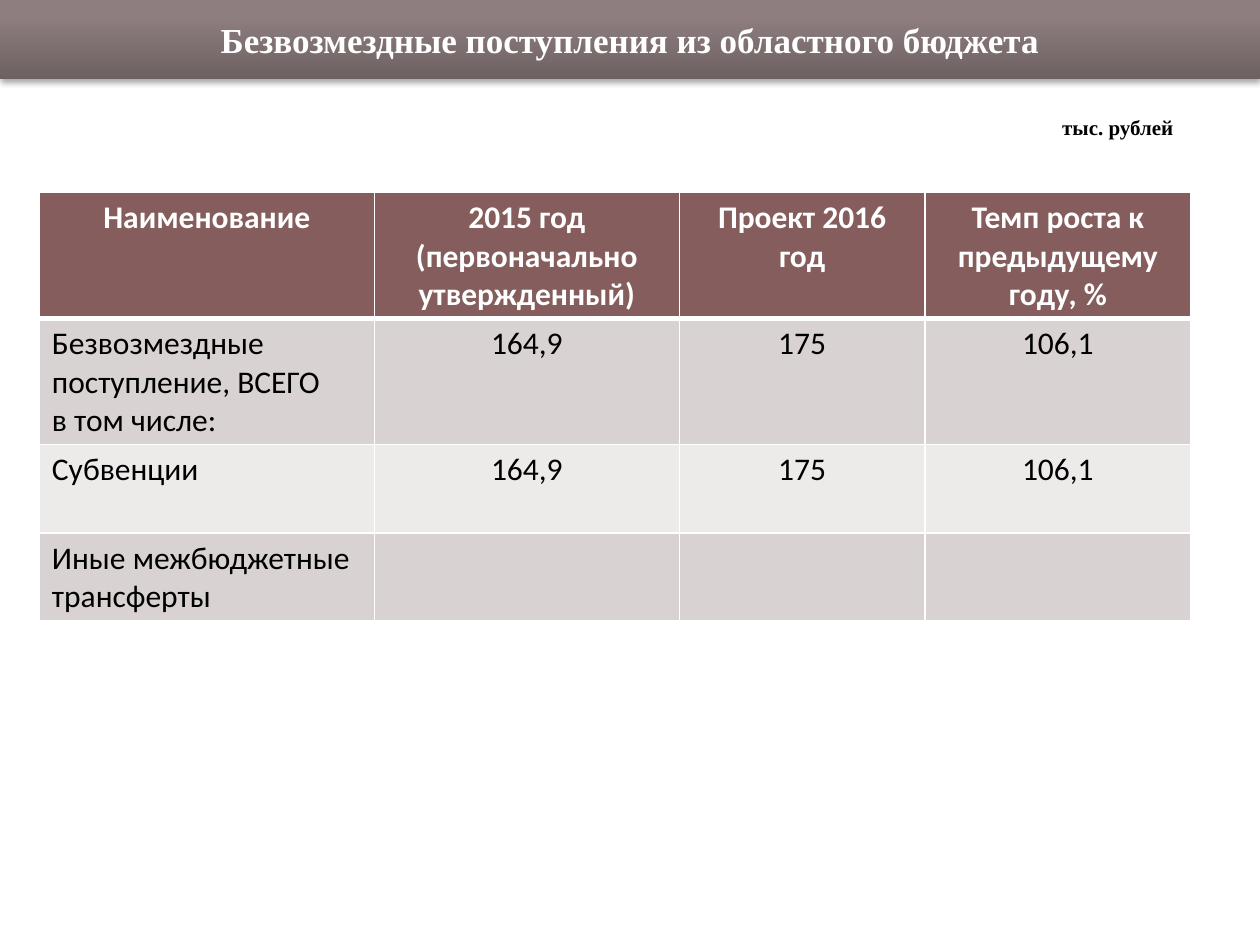
from lxml import etree
from pptx import Presentation
from pptx.dml.color import RGBColor
from pptx.enum.shapes import MSO_SHAPE
from pptx.enum.text import MSO_ANCHOR, PP_ALIGN
from pptx.oxml.ns import qn
from pptx.util import Pt

RECTANGLE = MSO_SHAPE.RECTANGLE
MIDDLE = MSO_ANCHOR.MIDDLE
LEFT, CENTER = PP_ALIGN.LEFT, PP_ALIGN.CENTER

WHITE, BLACK = "FFFFFF", "000000"
HEADER_FILL = "855D5D"
BAND_FILLS = ("D9D2D2", "EDEAEA")
BANNER_STOPS = ((0, "6E6162"), (0.8, "8E7E7F"))

TITLE_FONT = {"name": "Times New Roman", "size": Pt(20), "bold": True}
UNIT_FONT = {"name": "Times New Roman", "size": Pt(12), "bold": True}
HEADER_FONT = {"name": "Calibri", "size": Pt(18), "bold": True}
BODY_FONT = {"name": "Calibri", "size": Pt(18), "bold": False}

COLUMN_WIDTHS = (191.5, 174.2, 140.4, 151.9)
ROW_HEIGHTS = (72, 72, 50.4, 50.4)
ROWS = (
    ("Наименование", "2015 год (первоначально утвержденный)",
     "Проект 2016 год", "Темп роста к предыдущему году, %"),
    ("Безвозмездные поступление, ВСЕГО\nв том числе:", "164,9", "175", "106,1"),
    ("Субвенции", "164,9", "175", "106,1"),
    ("Иные межбюджетные трансферты", "", "", ""),
)


def rgb(value):
    return RGBColor.from_string(value)


def write_text(text_frame, text, font_format, color, alignment):
    text_frame.word_wrap = True
    text_frame.text = text
    for paragraph in text_frame.paragraphs:
        paragraph.alignment = alignment
        for name, value in font_format.items():
            setattr(paragraph.font, name, value)
        paragraph.font.color.rgb = rgb(color)


def add_shadow(shape, color, opacity, blur, distance):
    """Give the shape a soft shadow that falls straight down."""
    shape.shadow.inherit = False
    effects = shape._element.spPr.find(qn("a:effectLst"))
    shadow = etree.SubElement(effects, qn("a:outerShdw"), blurRad=str(Pt(blur)),
                              dist=str(Pt(distance)), dir="5400000", rotWithShape="0")
    shade = etree.SubElement(shadow, qn("a:srgbClr"), val=color)
    etree.SubElement(shade, qn("a:alpha"), val=str(opacity * 1000))


def add_banner(slide, box, title):
    banner = slide.shapes.add_shape(RECTANGLE, *map(Pt, box))
    banner.line.fill.background()
    banner.fill.gradient()
    banner.fill.gradient_angle = 90
    for stop, (position, color) in zip(banner.fill.gradient_stops, BANNER_STOPS):
        stop.position = position
        stop.color.rgb = rgb(color)
    add_shadow(banner, BLACK, 35, 3.1, 1.8)
    banner.text_frame.vertical_anchor = MIDDLE
    write_text(banner.text_frame, title, TITLE_FONT, WHITE, CENTER)


def add_unit_label(slide, box, text):
    label = slide.shapes.add_textbox(*map(Pt, box))
    write_text(label.text_frame, text, UNIT_FONT, BLACK, CENTER)


def set_borders(cell, widths):
    """Draw white borders; widths maps the sides L, R, T, B to points."""
    properties = cell._tc.get_or_add_tcPr()
    for index, (side, width) in enumerate(widths.items()):
        line = etree.Element(qn(f"a:ln{side}"), w=str(Pt(width)))
        fill = etree.SubElement(line, qn("a:solidFill"))
        etree.SubElement(fill, qn("a:srgbClr"), val=WHITE)
        properties.insert(index, line)


def add_revenue_table(slide, left, top):
    table = slide.shapes.add_table(
        len(ROWS), len(COLUMN_WIDTHS), Pt(left), Pt(top),
        Pt(sum(COLUMN_WIDTHS)), Pt(sum(ROW_HEIGHTS))).table
    for column, width in zip(table.columns, COLUMN_WIDTHS):
        column.width = Pt(width)
    for row, height in zip(table.rows, ROW_HEIGHTS):
        row.height = Pt(height)

    for row_index, texts in enumerate(ROWS):
        is_header = row_index == 0
        fill = HEADER_FILL if is_header else BAND_FILLS[(row_index - 1) % 2]
        font_format = HEADER_FONT if is_header else BODY_FONT
        color = WHITE if is_header else BLACK
        borders = {"L": 1, "R": 1, "T": 3 if row_index == 1 else 1,
                   "B": 3 if is_header else 1}
        for column_index, text in enumerate(texts):
            cell = table.cell(row_index, column_index)
            cell.fill.solid()
            cell.fill.fore_color.rgb = rgb(fill)
            set_borders(cell, borders)
            alignment = CENTER if is_header or column_index else LEFT
            write_text(cell.text_frame, text, font_format, color, alignment)


def main():
    presentation = Presentation()
    presentation.slide_width, presentation.slide_height = Pt(720), Pt(540)
    slide = presentation.slides.add_slide(presentation.slide_layouts[6])
    add_banner(slide, (0, 0, 720, 45), "Безвозмездные поступления из областного бюджета")
    add_unit_label(slide, (585.4, 62, 106.6, 21.6), "тыс. рублей")
    add_revenue_table(slide, 22.5, 110)
    presentation.save("out.pptx")


if __name__ == "__main__":
    main()
